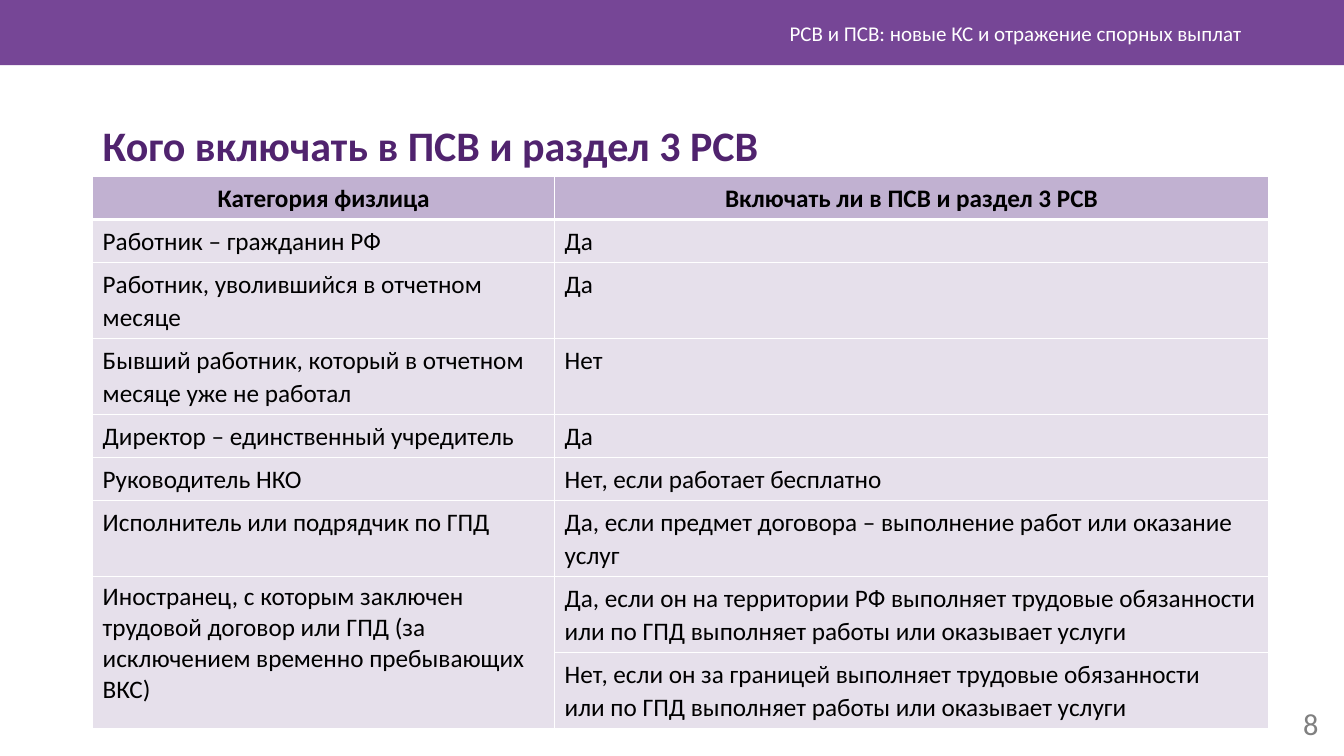
"""Builds the slide on whom to include in the ПСВ and section 3 of the РСВ."""
from lxml import etree
from pptx import Presentation
from pptx import util as u
from pptx.dml import color
from pptx.enum import shapes, text
from pptx.oxml import ns

Pt = u.Pt
COLORS = {
    "band": "764696", "title": "50236E", "head": "C1B1D1", "body": "E6E0EB",
    "white": "FFFFFF", "black": "000000", "number": "808080",
}
ALIGN = text.PP_ALIGN
ANCHOR = text.MSO_ANCHOR
SINGLE, DOUBLE = 30.8, 54.3
ANSWERS = [
    ("Категория физлица", "Включать ли в ПСВ и раздел 3 РСВ", SINGLE),
    ("Работник – гражданин РФ", "Да", SINGLE),
    ("Работник, уволившийся в отчетном месяце", "Да", DOUBLE),
    ("Бывший работник, который в отчетном месяце уже не работал", "Нет", DOUBLE),
    ("Директор – единственный учредитель", "Да", SINGLE),
    ("Руководитель НКО", "Нет, если работает бесплатно", SINGLE),
    ("Исполнитель или подрядчик по ГПД",
     "Да, если предмет договора – выполнение работ или оказание услуг", DOUBLE),
    ("Иностранец, с которым заключен трудовой договор или ГПД "
     "(за исключением временно пребывающих ВКС)",
     "Да, если он на территории РФ выполняет трудовые обязанности "
     "или по ГПД выполняет работы или оказывает услуги", DOUBLE),
    ("", "Нет, если он за границей выполняет трудовые обязанности\n"
     "или по ГПД выполняет работы или оказывает услуги", DOUBLE),
]


def rgb(name):
    return color.RGBColor.from_string(COLORS[name])


def write(frame, words, size=18, ink="black", bold=False, align=ALIGN.LEFT,
          anchor=None, spacing=1.0, after=0):
    frame.word_wrap = True
    if anchor is not None:
        frame.vertical_anchor = anchor
    paragraph = frame.paragraphs[0]
    paragraph.text = words
    paragraph.alignment = align
    paragraph.line_spacing = spacing
    paragraph.space_before = Pt(0)
    paragraph.space_after = Pt(after)
    for run in paragraph.runs:
        run.font.name = "Calibri"
        run.font.size = Pt(size)
        run.font.bold = bold
        run.font.color.rgb = rgb(ink)


class Page:
    def __init__(self, deck):
        self.slide = deck.slides.add_slide(deck.slide_layouts[5])

    def band(self, *place):
        strip = self.slide.shapes.add_shape(shapes.MSO_SHAPE.RECTANGLE, *map(Pt, place))
        strip.shadow.inherit = False
        strip.fill.solid()
        strip.fill.fore_color.rgb = rgb("band")
        strip.line.fill.background()

    def title(self, words, *place):
        heading = self.slide.shapes.title
        heading.left, heading.top, heading.width, heading.height = map(Pt, place)
        heading.text_frame.auto_size = text.MSO_AUTO_SIZE.NONE
        write(heading.text_frame, words, size=30, ink="title", bold=True,
              anchor=ANCHOR.TOP, spacing=1.07)

    def label(self, words, *place, **style):
        box = self.slide.shapes.add_textbox(*map(Pt, place))
        write(box.text_frame, words, align=ALIGN.RIGHT, anchor=ANCHOR.MIDDLE, **style)

    def borders(self, cell, top, bottom):
        properties = cell._tc.get_or_add_tcPr()
        widths = {"lnL": 1, "lnR": 1, "lnT": top, "lnB": bottom}
        for index, (side, width) in enumerate(widths.items()):
            edge = etree.Element(ns.qn(f"a:{side}"), w=str(Pt(width)))
            fill = etree.SubElement(edge, ns.qn("a:solidFill"))
            etree.SubElement(fill, ns.qn("a:srgbClr"), val=COLORS["white"])
            properties.insert(index, edge)

    def table(self, rows, widths, left, top):
        height = sum(row[-1] for row in rows)
        place = map(Pt, (left, top, sum(widths), height))
        grid = self.slide.shapes.add_table(len(rows), len(widths), *place).table
        for column, width in zip(grid.columns, widths):
            column.width = Pt(width)
        for r, (*answers, height) in enumerate(rows):
            grid.rows[r].height = Pt(height)
            head = r == 0
            for c, words in enumerate(answers):
                cell = grid.cell(r, c)
                cell.fill.solid()
                cell.fill.fore_color.rgb = rgb("head" if head else "body")
                self.borders(cell, 3 if r == 1 else 1, 3 if head else 1)
                spans = r + 1 < len(rows) and not rows[r + 1][c]
                write(cell.text_frame, words, bold=head,
                      align=ALIGN.CENTER if head else ALIGN.LEFT,
                      spacing=1.0 if spans else 1.07, after=0 if spans else 8)
                if not words:
                    grid.cell(r - 1, c).merge(cell)


def main():
    deck = Presentation()
    deck.slide_width, deck.slide_height = Pt(960), Pt(540)
    page = Page(deck)
    page.band(0, 0, 960, 46.6)
    page.label("8", 900.7, 502, 48.2, 28.8, size=21.7, ink="number")
    page.label("РСВ и ПСВ: новые КС и отражение спорных выплат",
               255, 9, 639, 28.8, size=15, ink="white")
    page.title("Кого включать в ПСВ и раздел 3 РСВ", 66.2, 79, 840, 46)
    page.table(ANSWERS, (330, 510), 66.2, 126)
    deck.save("out.pptx")


if __name__ == "__main__":
    main()
